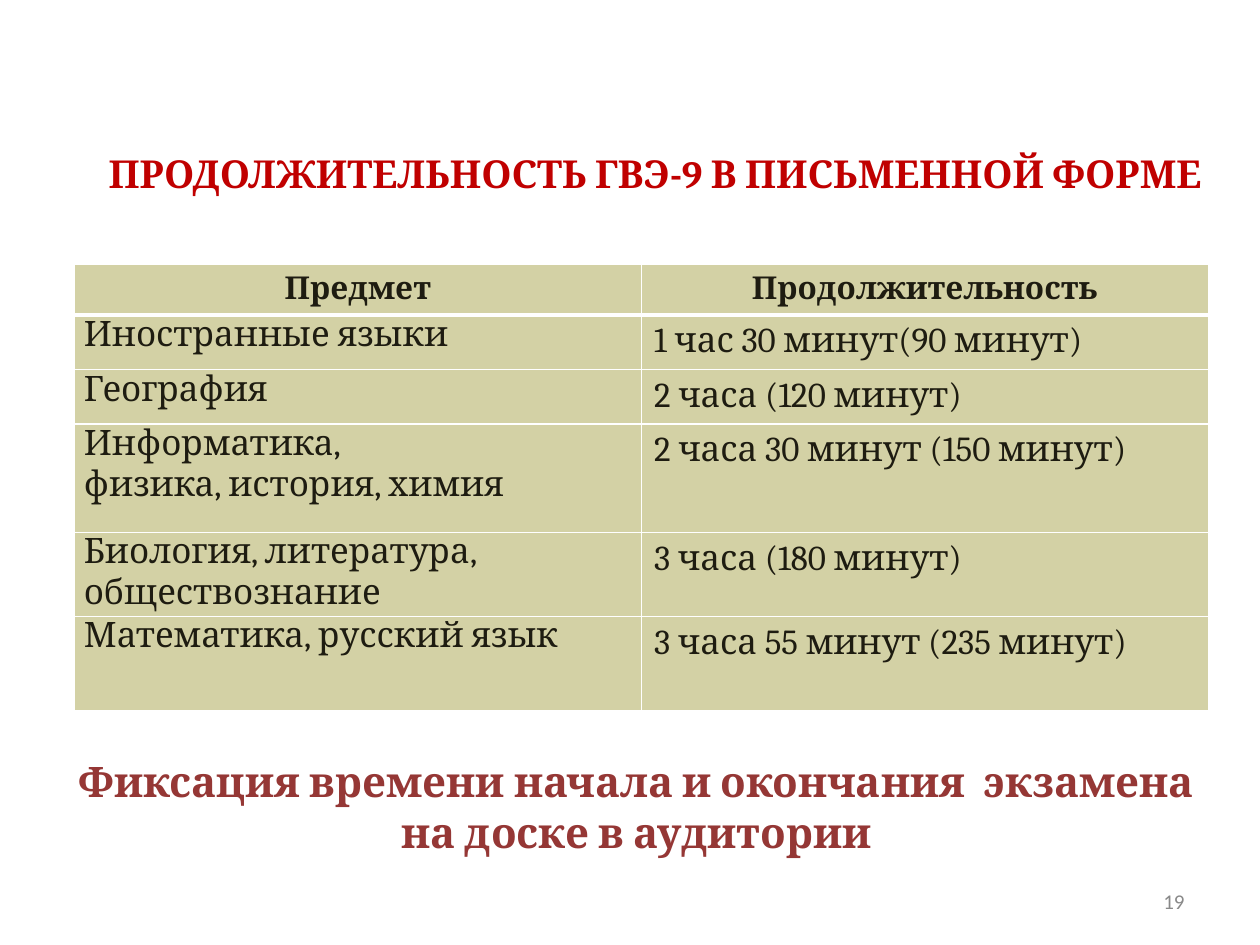
from lxml import etree
from pptx import Presentation
from pptx import util as u
from pptx.dml.color import RGBColor
from pptx.enum import text
from pptx.oxml import ns

COLORS = {
    "title": "C00000",
    "note": "953735",
    "number": "898989",
    "ink": "1E1C11",
    "cell": "D3D1A5",
    "border": "FFFFFF",
}
ALIGN = text.PP_ALIGN
ANCHOR = text.MSO_ANCHOR

HEADINGS = ("Предмет", "Продолжительность")
EXAMS = [
    ("Иностранные языки", "1 час 30 минут(90 минут)", ALIGN.JUSTIFY),
    ("География", "2 часа (120 минут)", ALIGN.JUSTIFY),
    ("Информатика,\nфизика, история, химия", "2 часа 30 минут (150 минут)", ALIGN.LEFT),
    ("Биология, литература, обществознание", "3 часа (180 минут)", ALIGN.LEFT),
    ("Математика, русский язык", "3 часа 55 минут (235 минут)", ALIGN.LEFT),
]
ROW_HEIGHTS = (0.94, 1.06, 1.06, 2.18, 1.62, 1.9)


class SlideBuilder:
    def __init__(self, page, font="Cambria"):
        self.page = page
        self.font = font

    def style(self, frame, size, color, align, bold=False, font=None):
        for para in frame.paragraphs:
            para.alignment = align
            para.font.name = font or self.font
            para.font.size = u.Pt(size)
            para.font.bold = bold
            para.font.color.rgb = RGBColor.from_string(COLORS[color])

    def text_box(self, place, words, size, color, align, anchor=ANCHOR.MIDDLE,
                 bold=True, font=None):
        box = self.page.shapes.add_textbox(*map(u.Cm, place))
        frame = box.text_frame
        frame.word_wrap = True
        frame.vertical_anchor = anchor
        frame.text = words
        self.style(frame, size, color, align, bold, font)

    def borders(self, cell, top, bottom):
        properties = cell._tc.get_or_add_tcPr()
        for side, width in (("L", 1), ("R", 1), ("T", top), ("B", bottom)):
            line = etree.SubElement(properties, ns.qn(f"a:ln{side}"), w=str(u.Pt(width)))
            fill = etree.SubElement(line, ns.qn("a:solidFill"))
            etree.SubElement(fill, ns.qn("a:srgbClr"), val=COLORS["border"])

    def cell(self, cell, words, size, align, bold=False, top=1, bottom=1):
        cell.text = words
        self.style(cell.text_frame, size, "ink", align, bold)
        self.borders(cell, top, bottom)
        cell.fill.solid()
        cell.fill.fore_color.rgb = RGBColor.from_string(COLORS["cell"])

    def exam_table(self, left, top, width):
        frame = self.page.shapes.add_table(
            len(ROW_HEIGHTS), len(HEADINGS),
            u.Cm(left), u.Cm(top), u.Cm(width), u.Cm(sum(ROW_HEIGHTS)))
        table = frame.table
        for row, height in zip(table.rows, ROW_HEIGHTS):
            row.height = u.Cm(height)
        for column, heading in enumerate(HEADINGS):
            self.cell(table.cell(0, column), heading, 18, ALIGN.CENTER, bold=True, bottom=3)
        for row, (subject, duration, align) in enumerate(EXAMS, start=1):
            top_width = 3 if row == 1 else 1
            name = table.cell(row, 0)
            self.cell(name, subject, 20, align, top=top_width)
            name.margin_left = name.margin_right = u.Cm(0.19)
            name.margin_top = name.margin_bottom = 0
            self.cell(table.cell(row, 1), duration, 20, ALIGN.LEFT, top=top_width)


def main():
    deck = Presentation()
    deck.slide_width, deck.slide_height = u.Cm(25.4), u.Cm(19.05)
    builder = SlideBuilder(deck.slides.add_slide(deck.slide_layouts[6]))
    builder.text_box((1.78, 2.39, 22.86, 2.18), "ПРОДОЛЖИТЕЛЬНОСТЬ ГВЭ-9 В ПИСЬМЕННОЙ ФОРМЕ",
                     22, "title", ALIGN.CENTER)
    builder.text_box((18.2, 17.66, 5.93, 1.01), "19", 12, "number", ALIGN.RIGHT,
                     bold=False, font="Calibri")
    builder.exam_table(1.5, 5.33, 22.86)
    builder.text_box((1.02, 15.11, 23.62, 3),
                     "Фиксация времени начала и окончания  экзамена на доске в аудитории",
                     24, "note", ALIGN.CENTER, anchor=ANCHOR.TOP)
    deck.save("out.pptx")


if __name__ == "__main__":
    main()
